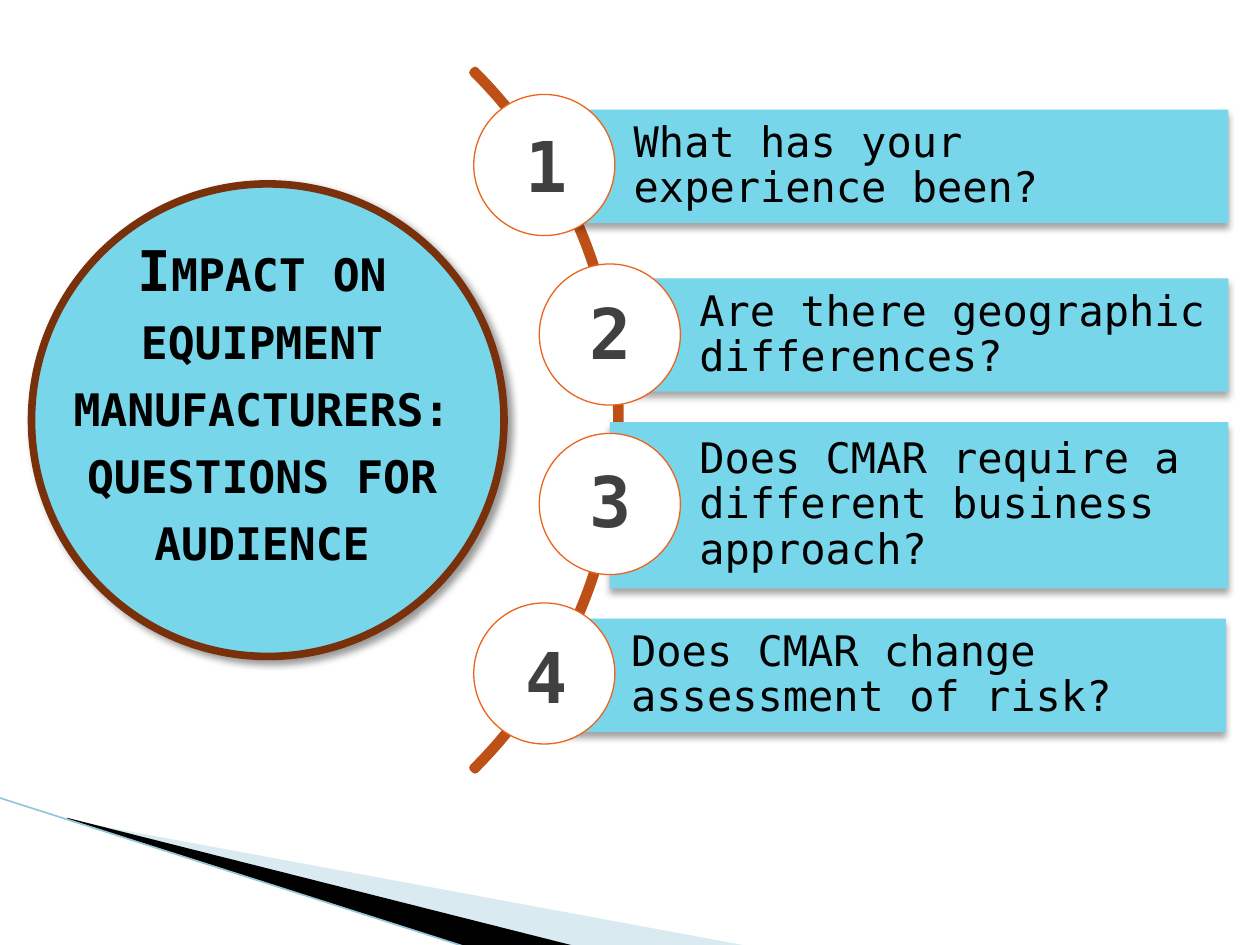
"""Build the slide of audience questions about equipment manufacturers."""
from typing import NamedTuple, Optional

from lxml.etree import SubElement
from pptx import Presentation
from pptx.dml.color import RGBColor
from pptx.enum.shapes import MSO_CONNECTOR, MSO_SHAPE as Preset
from pptx.enum.text import MSO_ANCHOR as Anchor, MSO_AUTO_SIZE as AutoSize, PP_ALIGN as Align
from pptx.oxml.ns import qn
from pptx.util import Inches, Pt

FONT = "DejaVu Sans Mono"
COLORS = {
    "black": "000000", "white": "FFFFFF", "sky": "78D6EA", "mist": "A0CBDC",
    "edge": "97C5D8", "brown": "78310B", "rust": "BC5016", "orange": "EB641B",
    "gray": "404040",
}
CIRCLE_SIZE, CIRCLE_TOP, CIRCLE_STEP = 1.12, 0.75, 1.345
BAR_INSETS = {"margin_left": 0.71, "margin_top": 0.07, "margin_right": 0.07, "margin_bottom": 0.07}


class Box(NamedTuple):
    left: float
    top: float
    width: float
    height: float


class Shadow(NamedTuple):
    alpha: int
    direction: int


class Question(NamedTuple):
    text: str
    bar: Box
    circle_left: float
    number: Box


class Swoosh(NamedTuple):
    points: tuple
    color: str
    alpha: int


QUESTIONS = (
    Question("What has your experience been?", Box(4.32, 0.87, 5.43, 0.9),
             3.76, Box(4.07, 0.92, 0.51, 0.77)),
    Question("Are there geographic differences?", Box(4.84, 2.21, 4.91, 0.9),
             4.28, Box(4.58, 2.25, 0.51, 0.77)),
    Question("Does CMAR require a different business approach?", Box(4.84, 3.35, 4.91, 1.32),
             4.28, Box(4.58, 3.58, 0.51, 0.77)),
    Question("Does CMAR change assessment of risk?", Box(4.3, 4.91, 5.43, 0.9),
             3.76, Box(4.07, 4.98, 0.51, 0.77)),
)
SWOOSHES = (
    Swoosh(((0.55, 6.51), (5.95, 7.51), (4.56, 7.51), (0.55, 6.5)), "mist", 40),
    Swoosh(((0.53, 6.49), (4.57, 7.51), (3.72, 7.52), (0.54, 6.5)), "black", 100),
)


def rgb(name: str) -> RGBColor:
    return RGBColor.from_string(COLORS[name])


def set_all(target, values: dict) -> None:
    for name, value in values.items():
        setattr(target, name, value)


def place(shape, box: Box) -> None:
    set_all(shape, {name: Inches(value) for name, value in box._asdict().items()})


def paint(shape, fill: str, line: Optional[str] = None, width: float = 0) -> None:
    shape.shadow.inherit = False
    shape.fill.solid()
    shape.fill.fore_color.rgb = rgb(fill)
    if line is None:
        shape.line.fill.background()
    else:
        shape.line.color.rgb = rgb(line)
        shape.line.width = Pt(width)


def add_shape(slide, preset, box: Box, fill: str, line: Optional[str] = None, width: float = 0):
    shape = slide.shapes.add_shape(preset, *map(Inches, box))
    paint(shape, fill, line, width)
    return shape


def cast_shadow(shape, shadow: Shadow) -> None:
    effects = shape.element.spPr.find(qn("a:effectLst"))
    outer = SubElement(effects, qn("a:outerShdw"), blurRad=str(Pt(4)), dist=str(Pt(3)),
                       dir=str(shadow.direction * 60000), algn="ctr", rotWithShape="0")
    color = SubElement(outer, qn("a:srgbClr"), val=COLORS["black"])
    SubElement(color, qn("a:alpha"), val=str(shadow.alpha * 1000))


def write(shape, text: str, size: int, color: str, bold: bool, align=Align.LEFT, spacing: float = 1.0):
    para = shape.text_frame.paragraphs[0]
    set_all(para, {"alignment": align, "line_spacing": spacing})
    span = para.add_run()
    span.text = text
    set_all(span.font, {"name": FONT, "size": Pt(size), "bold": bold})
    span.font.color.rgb = rgb(color)
    return span


def draw_swoosh(slide, swoosh: Swoosh) -> None:
    points = [(Inches(x), Inches(y)) for x, y in swoosh.points]
    builder = slide.shapes.build_freeform(*points[0])
    builder.add_line_segments(points[1:], close=True)
    shape = builder.convert_to_shape()
    paint(shape, swoosh.color)
    if swoosh.alpha < 100:
        color = shape.element.spPr.find(f"{qn('a:solidFill')}/{qn('a:srgbClr')}")
        SubElement(color, qn("a:alpha"), val=str(swoosh.alpha * 1000))


def draw_edge(slide) -> None:
    edge = slide.shapes.add_connector(MSO_CONNECTOR.STRAIGHT, *map(Inches, (-0.01, 6.33, 3.71, 7.52)))
    edge.line.color.rgb = rgb("edge")
    edge.line.width = Pt(0.95)
    SubElement(edge.element.spPr, qn("a:effectLst"))


def draw_title(slide) -> None:
    disc = add_shape(slide, Preset.OVAL, Box(0.25, 1.46, 3.75, 3.75), "sky", "brown", 4.33)
    cast_shadow(disc, Shadow(40, 45))
    title = slide.shapes.title
    slide.shapes.element.append(title.element)
    place(title, Box(0.33, 2.29, 3.5, 1.83))
    set_all(title.text_frame, {"word_wrap": True, "auto_size": AutoSize.NONE,
                               "vertical_anchor": Anchor.MIDDLE})
    span = write(title, "Impact on equipment manufacturers: questions for audience",
                 32, "black", True, Align.CENTER)
    span.font._element.set("cap", "small")


def draw_arc(slide) -> None:
    arc = add_shape(slide, Preset.BLOCK_ARC, Box(-2.93, -0.59, 7.85, 7.85), "sky", "rust", 4.33)
    for index, value in enumerate((189, 27, 0.003)):
        arc.adjustments[index] = value
    SubElement(arc.element.spPr.find(qn("a:ln")), qn("a:round"))


def draw_question(slide, index: int, question: Question) -> None:
    bar = add_shape(slide, Preset.RECTANGLE, question.bar, "sky")
    cast_shadow(bar, Shadow(35, 90))
    set_all(bar.text_frame, {name: Inches(value) for name, value in BAR_INSETS.items()})
    set_all(bar.text_frame, {"word_wrap": True, "vertical_anchor": Anchor.MIDDLE})
    write(bar, question.text, 24, "black", False, spacing=0.9)
    circle = Box(question.circle_left, CIRCLE_TOP + index * CIRCLE_STEP, CIRCLE_SIZE, CIRCLE_SIZE)
    add_shape(slide, Preset.OVAL, circle, "white", "orange", 0.75)


def draw_number(slide, number: int, box: Box) -> None:
    label = slide.shapes.add_textbox(*map(Inches, box))
    set_all(label.text_frame, {"word_wrap": False, "auto_size": AutoSize.SHAPE_TO_FIT_TEXT})
    write(label, str(number), 40, "gray", True)


def main() -> None:
    deck = Presentation()
    set_all(deck, {"slide_width": Inches(10), "slide_height": Inches(7.5)})
    slide = deck.slides.add_slide(deck.slide_layouts[5])
    for swoosh in SWOOSHES:
        draw_swoosh(slide, swoosh)
    draw_edge(slide)
    draw_title(slide)
    draw_arc(slide)
    for index, question in enumerate(QUESTIONS):
        draw_question(slide, index, question)
    for number, question in enumerate(QUESTIONS, start=1):
        draw_number(slide, number, question.number)
    deck.save("out.pptx")


if __name__ == "__main__":
    main()
